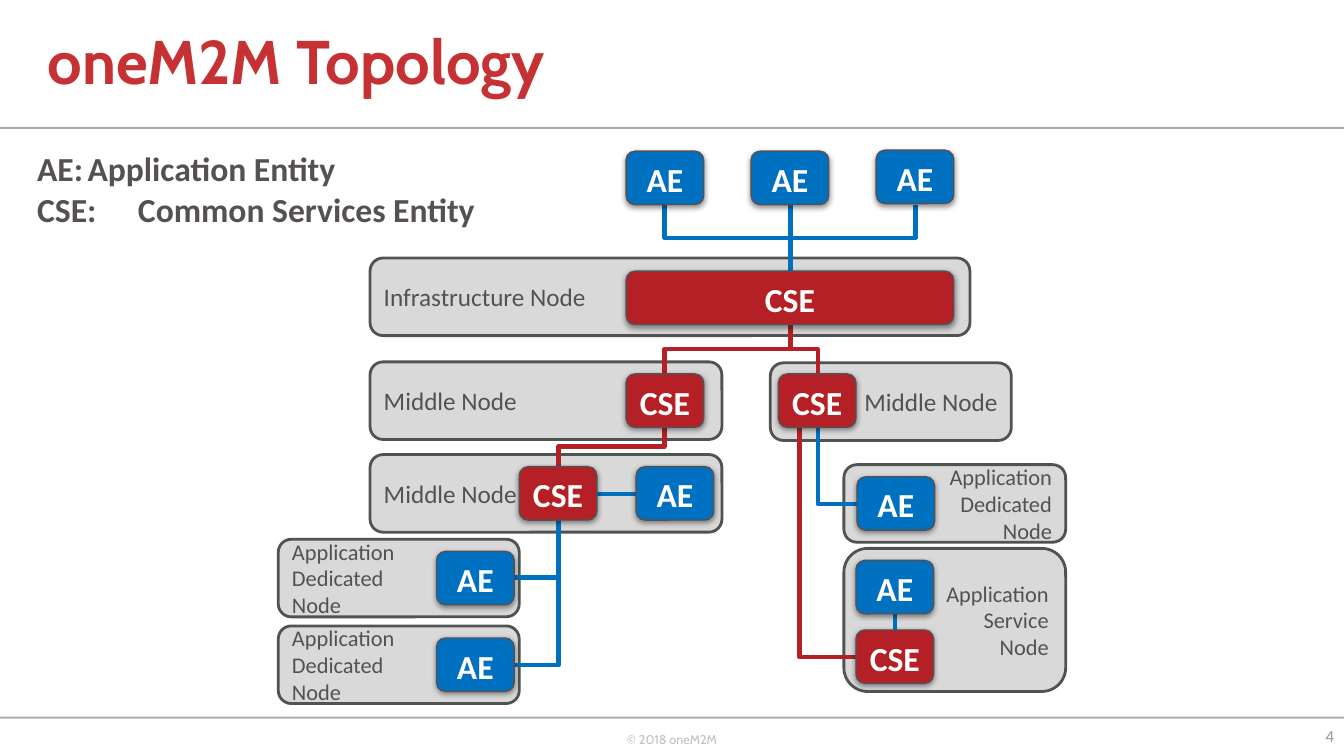
from lxml import etree
from pptx import Presentation
from pptx import util as u
from pptx.dml.color import RGBColor
from pptx.enum import shapes, text
from pptx.oxml.ns import qn

BLUE, RED, WHITE = "0070C0", "B42025", "FFFFFF"
NODE_FILL, NODE_INK, INK, RULE = "D9D9D9", "505450", "545054", "A7A9AC"
LEFT, CENTER, RIGHT = text.PP_ALIGN.LEFT, text.PP_ALIGN.CENTER, text.PP_ALIGN.RIGHT
TOP, MIDDLE = text.MSO_ANCHOR.TOP, text.MSO_ANCHOR.MIDDLE
ENTITY_W, ENTITY_H, NODE_H = 0.77, 0.53, 0.77


def rgb(value):
    return RGBColor.from_string(value)


def inches(*values):
    return [u.Inches(v) for v in values]


def write(sp, content, size, color, font="Calibri", bold=False, align=LEFT, anchor=MIDDLE):
    tf = sp.text_frame
    tf.text = content
    tf.vertical_anchor = anchor
    for p in tf.paragraphs:
        p.alignment = align
        p.font.name, p.font.size, p.font.bold = font, u.Pt(size), bold
        p.font.color.rgb = rgb(color)
    return tf


def add_box(slide, kind, box, fill, line=None, width=1):
    sp = slide.shapes.add_shape(kind, *inches(*box))
    sp.shadow.inherit = False
    sp.fill.solid()
    sp.fill.fore_color.rgb = rgb(fill)
    if line:
        sp.line.color.rgb = rgb(line)
        sp.line.width = u.Pt(width)
    else:
        sp.line.fill.background()
    return sp


def add_rule(slide, top):
    add_box(slide, shapes.MSO_SHAPE.RECTANGLE, (0, top, 13.33, 0.02), RULE)


def add_node(slide, x, y, w, label, h=NODE_H, size=18, align=LEFT):
    sp = add_box(slide, shapes.MSO_SHAPE.ROUNDED_RECTANGLE, (x, y, w, h), NODE_FILL, NODE_INK, 2)
    write(sp, label, size, NODE_INK, align=align).word_wrap = True


def add_shadow(sp):
    effects = sp._element.spPr.find(qn("a:effectLst"))
    shadow = etree.SubElement(effects, qn("a:outerShdw"), blurRad=str(u.Pt(4)),
                              dist=str(u.Pt(1.6)), dir="5400000", rotWithShape="0")
    color = etree.SubElement(shadow, qn("a:srgbClr"), val="000000")
    etree.SubElement(color, qn("a:alpha"), val="42000")


def add_entity(slide, label, x, y, w=ENTITY_W):
    fill = BLUE if label == "AE" else RED
    sp = add_box(slide, shapes.MSO_SHAPE.ROUNDED_RECTANGLE, (x, y, w, ENTITY_H), fill, INK)
    add_shadow(sp)
    tf = write(sp, label, 24, WHITE, bold=True, align=CENTER, anchor=TOP)
    tf.margin_left = tf.margin_right = 0
    tf.word_wrap = True


def add_link(slide, kind, color, x1, y1, x2, y2):
    c = slide.shapes.add_connector(kind, *inches(x1, y1, x2, y2))
    c.line.color.rgb = rgb(color)
    c.line.width = u.Pt(3)
    etree.SubElement(c._element.spPr, qn("a:effectLst"))
    return c


def add_elbow(slide, color, x1, y1, x2, y2, preset="bentConnector3"):
    """Elbow that leaves (x1, y1) downwards: a sideways one turned by 90 degrees."""
    cx, cy = (x1 + x2) / 2, (y1 + y2) / 2
    dx, dy = (x2 - x1) / 2, (y2 - y1) / 2
    c = add_link(slide, shapes.MSO_CONNECTOR.ELBOW, color, cx - dy, cy + dx, cx + dy, cy - dx)
    spPr = c._element.spPr
    spPr.find(qn("a:xfrm")).set("rot", "5400000")
    spPr.find(qn("a:prstGeom")).set("prst", preset)


def add_text(slide, box, content, size, color, **style):
    sp = slide.shapes.add_textbox(*inches(*box))
    return write(sp, content, size, color, **style)


def add_title(slide):
    sp = slide.shapes.title
    sp.left, sp.top, sp.width, sp.height = inches(0.37, 0, 8.59, 1.28)
    tf = write(sp, "oneM2M Topology", 44, "C63133", font="Cabin", bold=True)
    tf.auto_size = text.MSO_AUTO_SIZE.NONE
    tf.paragraphs[0].line_spacing = 0.9


def add_nodes(slide):
    dedicated = "Application\vDedicated\vNode"
    add_node(slide, 8.37, 5.44, 2.2, "Application\vService\vNode", h=1.42, size=16, align=RIGHT)
    add_node(slide, 8.37, 4.61, 2.2, dedicated, size=16, align=RIGHT)
    for y in (6.21, 5.35):
        add_node(slide, 2.76, y, 2.39, dedicated, size=16)
    add_node(slide, 7.64, 3.6, 2.39, "Middle Node", align=RIGHT)
    for y in (3.59, 4.51):
        add_node(slide, 3.67, y, 3.49, "Middle Node")
    add_node(slide, 3.67, 2.56, 5.95, "Infrastructure Node")


def add_links(slide):
    straight = shapes.MSO_CONNECTOR.STRAIGHT
    for x in (6.59, 9.08):
        add_elbow(slide, BLUE, x, 2.03, 7.84, 2.69)
    add_link(slide, straight, BLUE, 7.84, 2.03, 7.84, 2.69)
    for x in (6.59, 8.11):
        add_elbow(slide, RED, 7.84, 3.22, x, 3.71)
    add_elbow(slide, RED, 6.59, 4.23, 5.54, 4.63)
    add_link(slide, straight, BLUE, 5.92, 4.9, 6.31, 4.9)
    add_link(slide, straight, BLUE, 8.88, 6.09, 8.88, 6.25)
    for y in (5.73, 6.6):
        add_elbow(slide, BLUE, 5.54, 5.16, 5.1, y, "bentConnector2")
    add_elbow(slide, BLUE, 8.11, 4.23, 8.5, 5, "bentConnector2")
    add_elbow(slide, RED, 7.93, 4.23, 8.49, 6.52, "bentConnector2")


def add_entities(slide):
    application = [(6.21, 1.5), (7.45, 1.5), (8.69, 1.49), (6.31, 4.63), (8.5, 4.73),
                   (4.33, 5.47), (4.33, 6.33), (8.49, 5.56)]
    services = [(6.21, 3.71), (7.72, 3.71), (5.15, 4.63), (8.49, 6.25)]
    for x, y in application:
        add_entity(slide, "AE", x, y)
    for x, y in services:
        add_entity(slide, "CSE", x, y)
    add_entity(slide, "CSE", 6.21, 2.69, w=3.25)


def main():
    prs = Presentation()
    prs.slide_width, prs.slide_height = inches(13.33, 7.5)
    slide = prs.slides.add_slide(prs.slide_layouts[5])
    for top in (1.26, 7.11):
        add_rule(slide, top)
    add_text(slide, (6.12, 7.21, 1.12, 0.4), "© 2018 oneM2M", 9, "BFBFBF",
             font="Cabin", anchor=TOP)
    add_title(slide)
    add_text(slide, (12.79, 7.1, 0.54, 0.4), "4", 12, "999899", align=RIGHT).word_wrap = True
    add_nodes(slide)
    add_links(slide)
    add_entities(slide)
    add_text(slide, (0.27, 1.42, 4.59, 0.91),
             "AE:\tApplication Entity\nCSE:\tCommon Services Entity", 24, INK,
             bold=True, anchor=TOP)
    prs.save("out.pptx")


if __name__ == "__main__":
    main()
